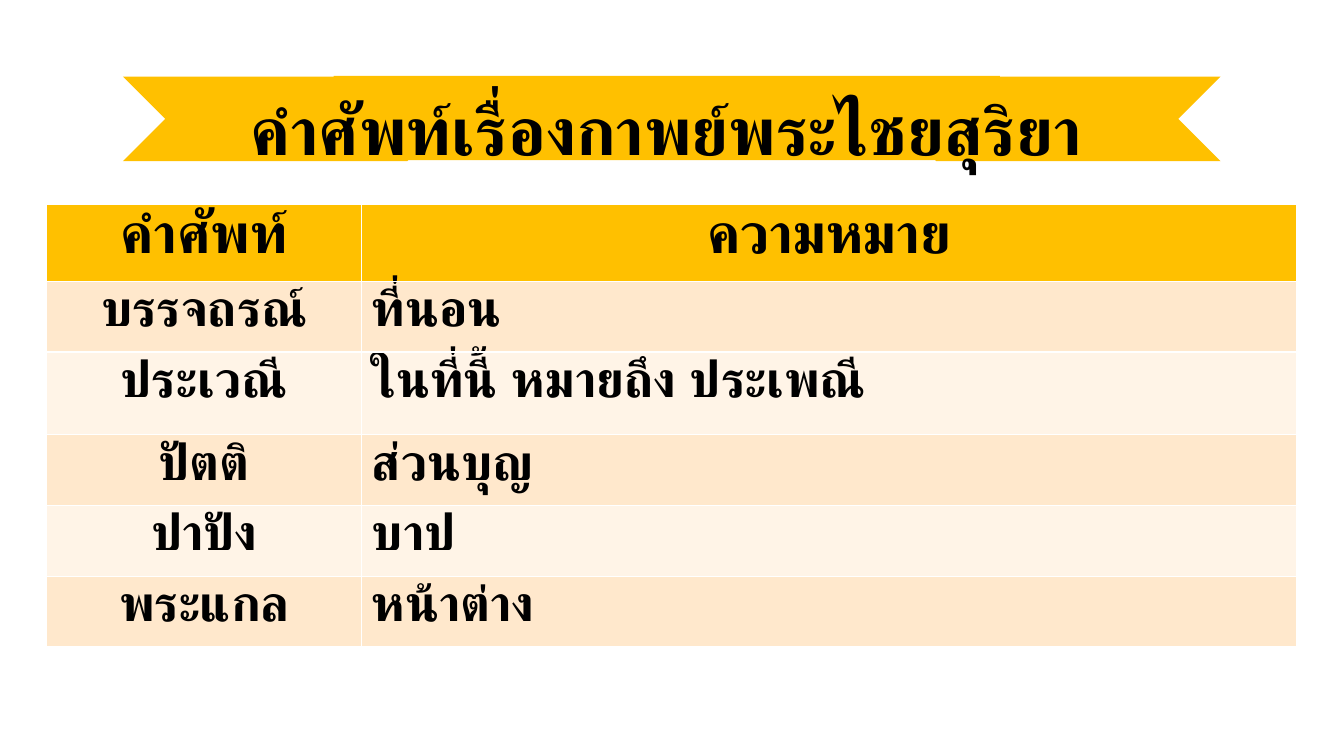
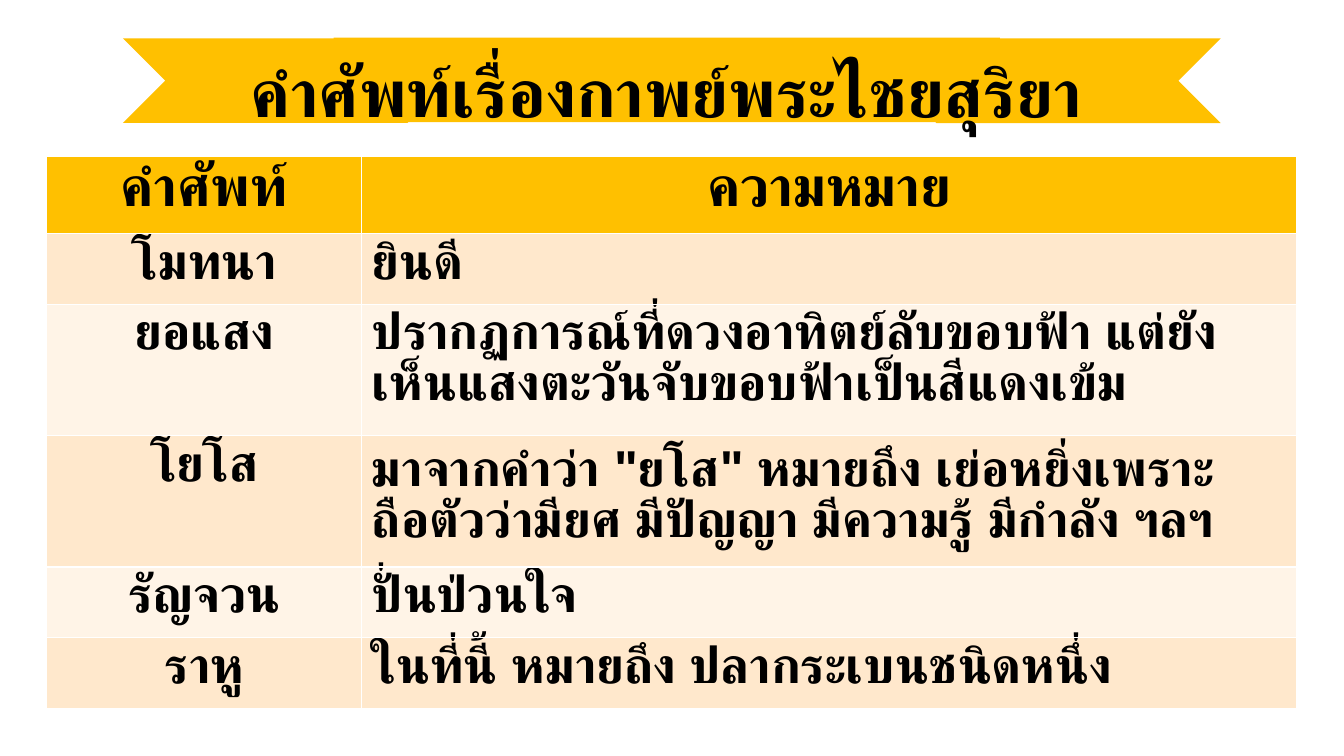
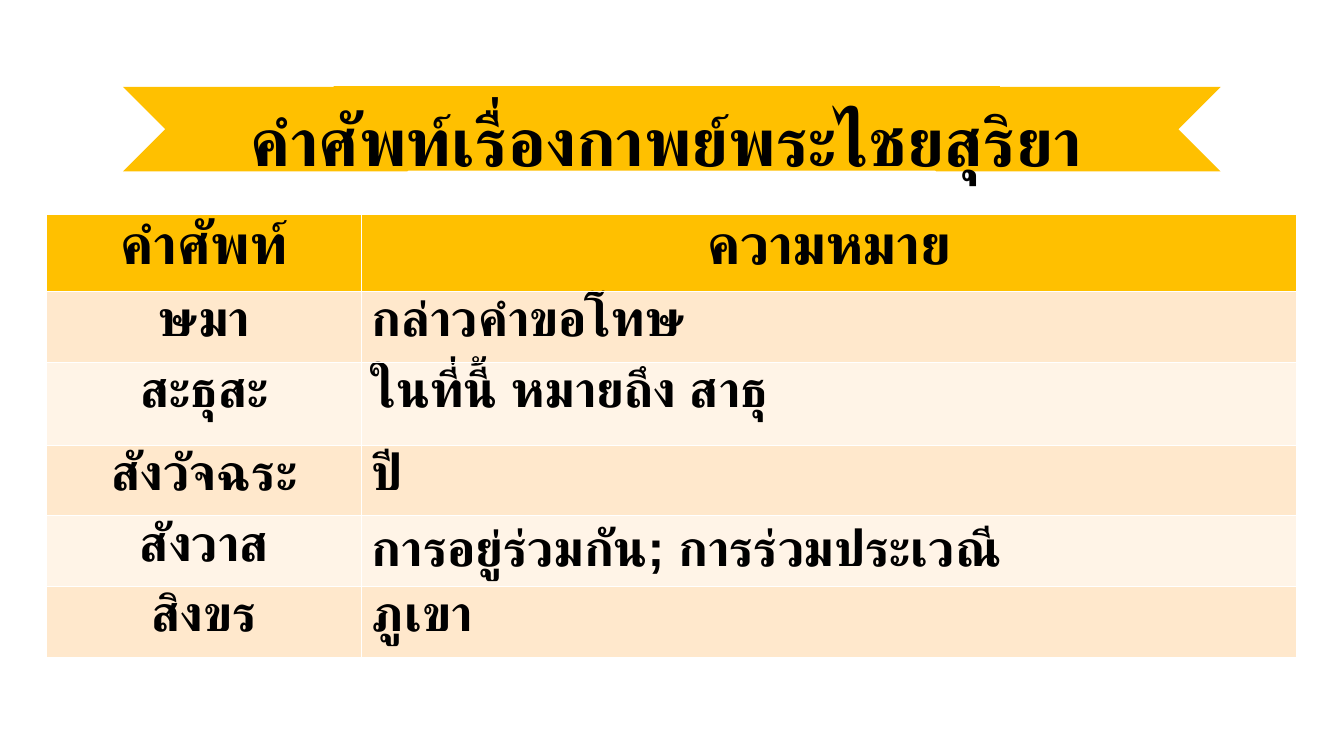
import pptx
import pptx.dml.color
import pptx.enum.lang
import pptx.enum.shapes
import pptx.enum.text
import pptx.util
from pptx.util import Cm

COLORS = {"gold": "FFC000", "dark row": "FFE8CC", "light row": "FFF4E7", "text": "000000"}
FONT = "Arial"
TITLE = "คำศัพท์เรื่องกาพย์พระไชยสุริยา"
HEADER = ("คำศัพท์", "ความหมาย")
CENTER = pptx.enum.text.PP_ALIGN.CENTER
LEFT = pptx.enum.text.PP_ALIGN.LEFT

# Row heights in centimetres
HEADER_ROW, WORD_ROW, TALL_ROW, TWO_LINE_ROW = 1.9, 1.78, 2.09, 3.31

# Per slide: ribbon top, table top, and rows of word, meaning, height
GLOSSARY = [
    (1.91, 5.14, [
        ("บรรจถรณ์", "ที่นอน", WORD_ROW),
        ("ประเวณี", "ในที่นี้ หมายถึง ประเพณี", TALL_ROW),
        ("ปัตติ", "ส่วนบุญ", WORD_ROW),
        ("ปาปัง", "บาป", WORD_ROW),
        ("พระแกล", "หน้าต่าง", WORD_ROW),
    ]),
    (0.95, 3.94, [
        ("โมทนา", "ยินดี", WORD_ROW),
        ("ยอแสง", "ปรากฏการณ์ที่ดวงอาทิตย์ลับขอบฟ้า แต่ยังเห็นแสงตะวันจับขอบฟ้าเป็นสีแดงเข้ม",
         TWO_LINE_ROW),
        ("โยโส", 'มาจากคำว่า "ยโส" หมายถึง เย่อหยิ่งเพราะถือตัวว่ามียศ มีปัญญา มีความรู้ มีกำลัง ฯลฯ',
         TWO_LINE_ROW),
        ("รัญจวน", "ปั่นป่วนใจ", WORD_ROW),
        ("ราหู", "ในที่นี้ หมายถึง ปลากระเบนชนิดหนึ่ง", WORD_ROW),
    ]),
    (2.17, 5.4, [
        ("ษมา", "กล่าวคำขอโทษ", WORD_ROW),
        ("สะธุสะ", "ในที่นี้ หมายถึง สาธุ", TALL_ROW),
        ("สังวัจฉระ", "ปี", WORD_ROW),
        ("สังวาส", "การอยู่ร่วมกัน; การร่วมประเวณี", WORD_ROW),
        ("สิงขร", "ภูเขา", WORD_ROW),
    ]),
]


def write_text(text_frame, text, size=36, align=LEFT):
    paragraph = text_frame.paragraphs[0]
    paragraph.alignment = align
    run = paragraph.add_run()
    run.text = text
    run.font.name = FONT
    run.font.size = pptx.util.Pt(size)
    run.font.bold = True
    run.font.language_id = pptx.enum.lang.MSO_LANGUAGE_ID.THAI
    run.font.color.rgb = pptx.dml.color.RGBColor.from_string(COLORS["text"])


def fill_with(target, color):
    target.fill.solid()
    target.fill.fore_color.rgb = pptx.dml.color.RGBColor.from_string(COLORS[color])


presentation = pptx.Presentation()
presentation.slide_width = Cm(33.87)
presentation.slide_height = Cm(19.05)
shape_types = pptx.enum.shapes.MSO_SHAPE

for ribbon_top, table_top, entries in GLOSSARY:
    slide = presentation.slides.add_slide(presentation.slide_layouts[6])

    # Title ribbon: two notched ends joined by a band
    ribbon = slide.shapes.add_group_shape()
    for shape_type, left, top, width, rotation in (
        (shape_types.CHEVRON, 22.53, ribbon_top + 0.02, 8.23, 180),
        (shape_types.CHEVRON, 3.1, ribbon_top + 0.02, 8.23, 0),
        (shape_types.RECTANGLE, 8.41, ribbon_top, 16.79, 0),
    ):
        shape = ribbon.shapes.add_shape(shape_type, Cm(left), Cm(top), Cm(width), Cm(2.13))
        shape.rotation = rotation
        shape.shadow.inherit = False
        shape.line.fill.background()
        fill_with(shape, "gold")
    title = ribbon.shapes.add_textbox(Cm(4.65), Cm(ribbon_top + 0.2), Cm(24.28), Cm(2.31))
    title.text_frame.word_wrap = True
    title.text_frame.auto_size = pptx.enum.text.MSO_AUTO_SIZE.SHAPE_TO_FIT_TEXT
    write_text(title.text_frame, TITLE, size=48, align=CENTER)

    # Word table
    rows = [(*HEADER, HEADER_ROW), *entries]
    table_height = sum(height for word, meaning, height in rows)
    table = slide.shapes.add_table(
        len(rows), 2, Cm(1.18), Cm(table_top), Cm(31.5), Cm(table_height)).table
    table.columns[0].width = Cm(7.94)
    table.columns[1].width = Cm(23.56)
    for row_index, (word, meaning, height) in enumerate(rows):
        table.rows[row_index].height = Cm(height)
        is_header = row_index == 0
        color = "gold" if is_header else "dark row" if row_index % 2 else "light row"
        for column_index, text in enumerate((word, meaning)):
            cell = table.cell(row_index, column_index)
            fill_with(cell, color)
            write_text(cell.text_frame, text, size=40 if is_header else 36,
                       align=CENTER if is_header or column_index == 0 else LEFT)

presentation.save("out.pptx")
